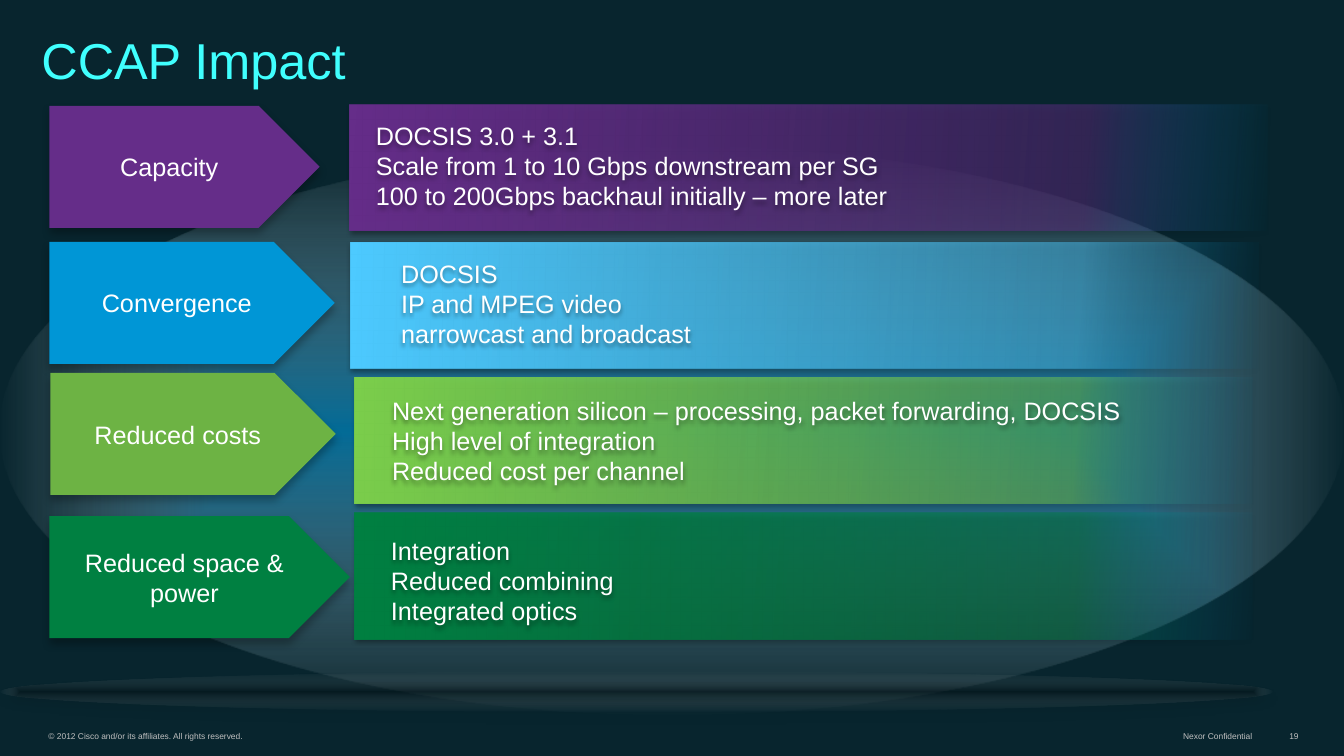
from pptx import Presentation
from pptx.util import Inches, Pt
from pptx.dml.color import RGBColor
from pptx.enum.shapes import MSO_SHAPE as Kind
from pptx.enum.text import MSO_ANCHOR as Anchor, PP_ALIGN as Align
from pptx.oxml import parse_xml
from pptx.oxml.ns import nsdecls

FONT = "Arial"
DARK = RGBColor(0x08, 0x25, 0x2E)
CYAN = RGBColor(0x40, 0xFF, 0xFE)
WHITE = RGBColor(0xFF, 0xFF, 0xFF)
GRAY = RGBColor(0xC0, 0xC0, 0xC0)
BLACK = RGBColor(0, 0, 0)
BLUE = RGBColor(0x00, 0x96, 0xD6)
SKY = RGBColor(0x4D, 0xCA, 0xFF)
FADE = RGBColor(0x00, 0x92, 0xD0)
PURPLE = RGBColor(0x65, 0x2D, 0x89)
LIME = RGBColor(0x7B, 0xCE, 0x4B)
LEAF = RGBColor(0x6D, 0xB3, 0x44)
GREEN = RGBColor(0x00, 0x80, 0x41)

# Content
TITLE = "CCAP Impact"
# Each row: label, arrow box, arrow colour, bar box, bar colour, text box, lines
ROWS = [
    ("Capacity", (0.49, 1.05, 2.68, 1.21), PURPLE,
     (3.47, 1.04, 9.1, 1.25), PURPLE, (3.63, 1.14, 9.08, 1.01),
     ["DOCSIS 3.0 + 3.1",
      "Scale from 1 to 10 Gbps downstream per SG",
      "100 to 200Gbps backhaul initially – more later"]),
    ("Convergence", (0.49, 2.4, 2.83, 1.21), BLUE,
     (3.48, 2.41, 9, 1.25), SKY, (3.88, 2.51, 7.05, 1.01),
     ["DOCSIS", "IP and MPEG video", "narrowcast and broadcast"]),
    ("Reduced costs", (0.5, 3.7, 2.83, 1.21), LEAF,
     (3.52, 3.75, 8.9, 1.25), LIME, (3.79, 3.87, 8.61, 1.01),
     ["Next generation silicon – processing, packet forwarding, DOCSIS",
      "High level of integration",
      "Reduced cost per channel"]),
    ("Reduced space & power", (0.49, 5.12, 2.98, 1.21), GREEN,
     (3.52, 5.09, 8.9, 1.25), GREEN, (3.78, 5.26, 8.34, 1.01),
     ["Integration", "Reduced combining", "Integrated optics"]),
]
FOOT = [
    ("© 2012 Cisco and/or its affiliates. All rights reserved.",
     (0.39, 7.2, 4.99, 0.19), Align.LEFT),
    ("Nexor Confidential", (11.64, 7.2, 0.87, 0.19), Align.RIGHT),
    ("19", (12.69, 7.2, 0.28, 0.19), Align.RIGHT),
]
# Shadows: opacity %, blur pt, distance pt
SOFT = (35, 3.1, 1.8)
DEEP = (27, 6, 4)
ROUND = ('<a:path path="shape"><a:fillToRect l="50000" t="50000" '
         'r="50000" b="50000"/></a:path>')
SLANT = '<a:lin ang="240000" scaled="0"/>'

deck = Presentation()
deck.slide_width, deck.slide_height = Inches(13.33), Inches(7.5)
slide = deck.slides.add_slide(deck.slide_layouts[6])
slide.background.fill.solid()
slide.background.fill.fore_color.rgb = DARK


def tint(color, alpha):
    return (f'<a:srgbClr val="{color}">'
            f'<a:alpha val="{alpha * 1000}"/></a:srgbClr>')


def shade(shape, look):
    shape.shadow.inherit = False
    if look:
        alpha, blur, dist = look
        shape._element.spPr.find(
            "{*}effectLst").append(parse_xml(
                f'<a:outerShdw {nsdecls("a")} blurRad="{Pt(blur)}" '
                f'dist="{Pt(dist)}" dir="5400000" algn="t" '
                f'rotWithShape="0">{tint(BLACK, alpha)}</a:outerShdw>'))


def blend(shape, stops, form):
    shape.fill.background()
    spot = shape._element.spPr.find("{*}noFill")
    marks = "".join(f'<a:gs pos="{pos * 1000}">{tint(color, alpha)}</a:gs>'
                    for pos, color, alpha in stops)
    spot.getparent().replace(spot, parse_xml(
        f'<a:gradFill {nsdecls("a")} rotWithShape="1">'
        f'<a:gsLst>{marks}</a:gsLst>{form}</a:gradFill>'))


def draw(kind, box, look=None):
    shape = slide.shapes.add_shape(kind, *map(Inches, box))
    shape.line.fill.background()
    shade(shape, look)
    return shape


def write(shape, lines, size, color, align, anchor, wrap=True):
    frame = shape.text_frame
    frame.word_wrap = wrap
    frame.vertical_anchor = anchor
    for i, line in enumerate(lines):
        para = frame.add_paragraph() if i else frame.paragraphs[0]
        para.alignment = align
        run = para.add_run()
        run.text = line
        run.font.name, run.font.size = FONT, Pt(size)
        run.font.color.rgb = color


def label(box, *args):
    shape = slide.shapes.add_textbox(*map(Inches, box))
    write(shape, *args)
    return shape


# Footer
for text, box, align in FOOT:
    note = label(box, [text], 6, GRAY, align, Anchor.BOTTOM,
                 align == Align.LEFT).text_frame
    note.margin_left = note.margin_right = Inches(0.09)
    note.margin_top = note.margin_bottom = Inches(0.04)

# Backdrop glow and title
glow = draw(Kind.OVAL, (0, 1.44, 13.33, 5.66))
blend(glow, [(0, BLUE, 62), (100, WHITE, 0)], ROUND)
head = label((0.32, 0.01, 11.88, 0.92), [TITLE], 36, CYAN,
             Align.LEFT, Anchor.BOTTOM).text_frame
head.margin_left = head.margin_right = Inches(0.09)
head.paragraphs[0].line_spacing = 0.8

# Fading bars with their text
for _, _, _, place, color, box, lines in ROWS:
    bar = draw(Kind.RECTANGLE, place, SOFT)
    blend(bar, [(0, color, 100), (80, color, 45), (100, FADE, 0)], SLANT)
    shade(label(box, lines, 18, WHITE, Align.LEFT, Anchor.TOP), SOFT)

# Floor shadow
floor = draw(Kind.OVAL, (0, 6.66, 12.62, 0.4), DEEP)
blend(floor, [(0, BLACK, 25), (100, WHITE, 0)], ROUND)

# Arrows
for name, place, color, *_ in ROWS:
    arrow = draw(Kind.PENTAGON, place, DEEP)
    arrow.fill.solid()
    arrow.fill.fore_color.rgb = color
    write(arrow, [name], 18, WHITE, Align.CENTER, Anchor.MIDDLE)

deck.save("out.pptx")
